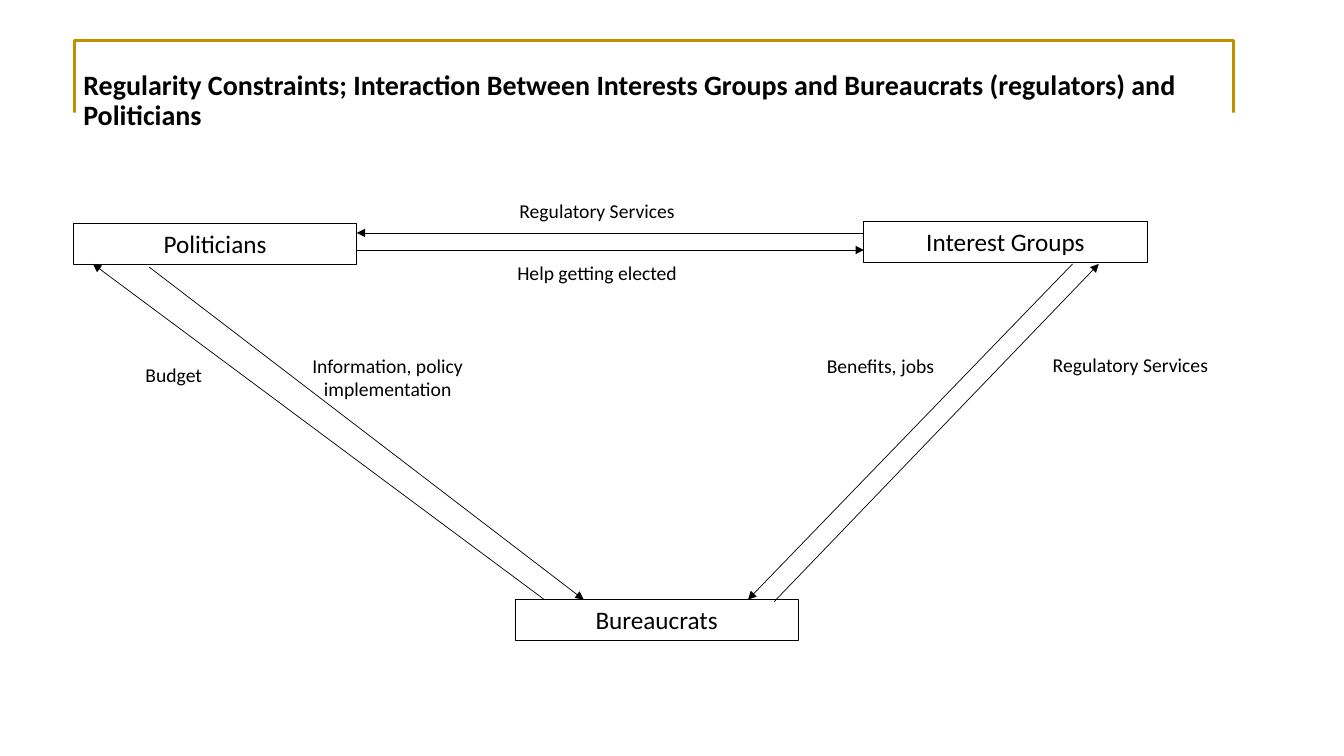
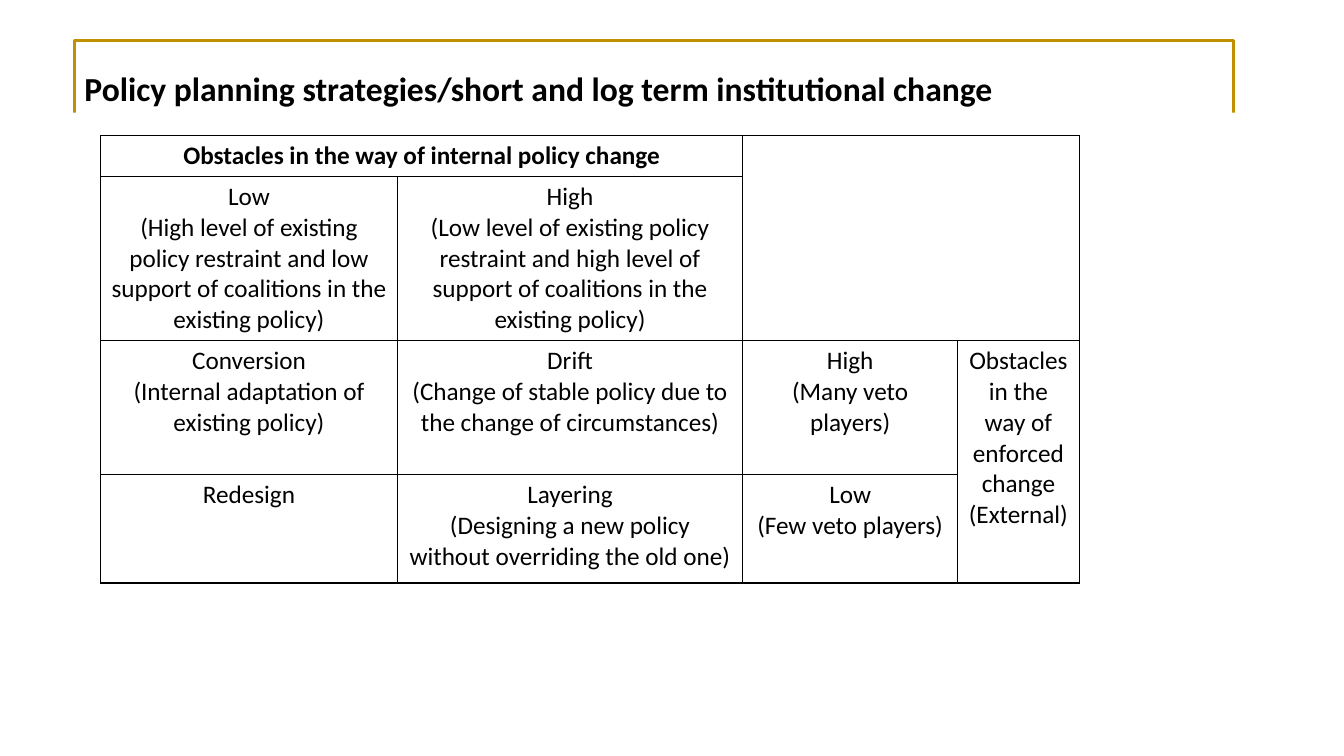
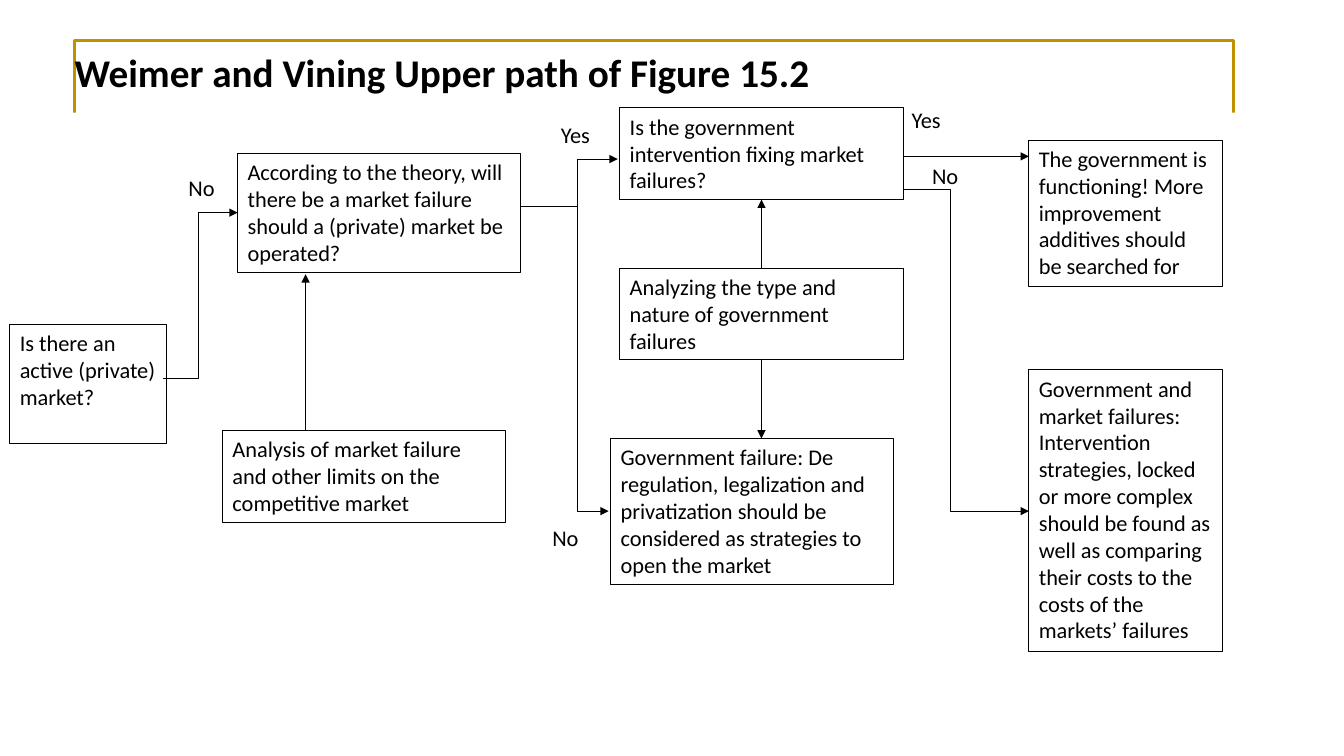
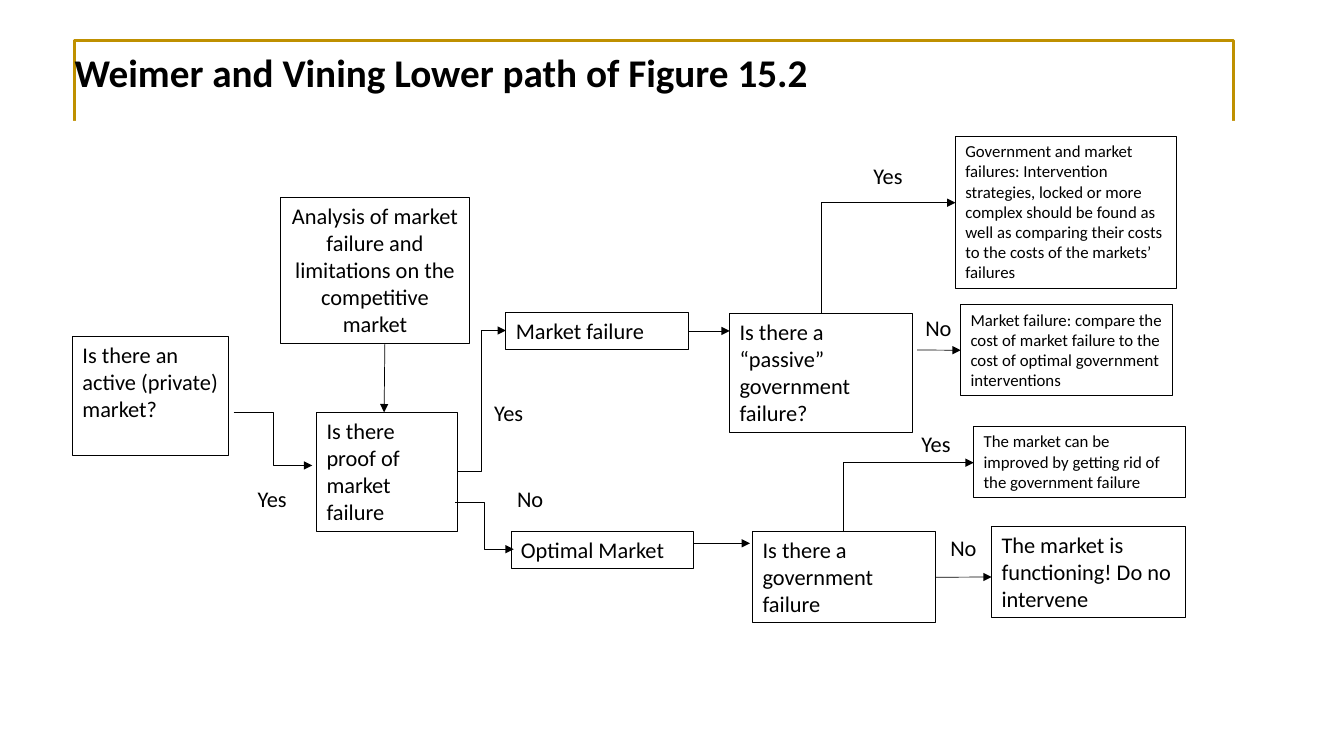
"""Build four slides on regulation, policy change and market failure."""
from lxml import etree
from pptx import Presentation
from pptx.dml.color import RGBColor
from pptx.enum.shapes import MSO_CONNECTOR, MSO_SHAPE
from pptx.enum.text import MSO_ANCHOR, PP_ALIGN
from pptx.oxml.ns import qn
from pptx.util import Cm, Pt

COLORS = {"ink": "000000", "gold": "BF9000", "paper": "FFFFFF"}
FONT = "Calibri"
RECT = MSO_SHAPE.RECTANGLE
STRAIGHT, ELBOW = MSO_CONNECTOR.STRAIGHT, MSO_CONNECTOR.ELBOW
LEFT, CENTER = PP_ALIGN.LEFT, PP_ALIGN.CENTER
TOP, MIDDLE = MSO_ANCHOR.TOP, MSO_ANCHOR.MIDDLE
SITE_TOP, SITE_LEFT, SITE_BOTTOM, SITE_RIGHT = range(4)
WIDE = 7.14
FAILURES = (
    "Government and market failures: Intervention strategies, locked or more "
    "complex should be found as well as comparing their costs to the costs of "
    "the markets’ failures"
)


def color(name):
    return RGBColor.from_string(COLORS[name])


def write(frame, text, size, align=LEFT, bold=False):
    frame.word_wrap = True
    for i, line in enumerate(text.split("\n")):
        para = frame.add_paragraph() if i else frame.paragraphs[0]
        para.text = line
        para.alignment = align
        font = para.font
        font.name, font.size, font.bold = FONT, Pt(size), bold
        font.color.rgb = color("ink")


def rect(slide, x, y, w, h, line=None, weight=0.75, fill=None):
    shape = slide.shapes.add_shape(RECT, Cm(x), Cm(y), Cm(w), Cm(h))
    shape.shadow.inherit = False
    if fill:
        shape.fill.solid()
        shape.fill.fore_color.rgb = color(fill)
    else:
        shape.fill.background()
    if line:
        shape.line.color.rgb = color(line)
        shape.line.width = Pt(weight)
    else:
        shape.line.fill.background()
    return shape


def box(slide, text, x, y, w, h, size=16, align=LEFT):
    shape = rect(slide, x, y, w, h, "ink")
    shape.text_frame.vertical_anchor = TOP
    write(shape.text_frame, text, size, align)
    return shape


def label(slide, text, x, y, w=2.18, h=0.94, size=16):
    shape = slide.shapes.add_textbox(Cm(x), Cm(y), Cm(w), Cm(h))
    write(shape.text_frame, text, size, CENTER)


def link(slide, kind, x1, y1, x2, y2):
    line = slide.shapes.add_connector(kind, Cm(x1), Cm(y1), Cm(x2), Cm(y2))
    line.line.color.rgb = color("ink")
    line.line.width = Pt(0.5)
    etree.SubElement(line.line._get_or_add_ln(), qn("a:tailEnd"), type="triangle")
    etree.SubElement(line._element.spPr, qn("a:effectLst"))
    return line


def arrow(slide, x1, y1, x2, y2, start=None, end=None):
    line = link(slide, STRAIGHT, x1, y1, x2, y2)
    if start:
        line.begin_connect(*start)
    if end:
        line.end_connect(*end)


def elbow(slide, x1, y1, x2, y2, bend=None):
    line = link(slide, ELBOW, x1, y1, x2, y2)
    if bend is not None:
        ratio = round((bend - x1) / (x2 - x1) * 100000)
        guides = line._element.spPr.find(qn("a:prstGeom")).get_or_add_avLst()
        etree.SubElement(guides, qn("a:gd"), name="adj1", fmla=f"val {ratio}")


def start_slide(deck, title, size, x=1.63, y=0.05, h=3.68, anchor=MIDDLE, cut=2.84):
    slide = deck.slides.add_slide(deck.slide_layouts[6])
    rect(slide, 1.88, 1.02, 29.21, 3.2, "gold", 2.25)
    rect(slide, 1.63, cut, 29.9, 1.55, fill="paper")
    head = slide.shapes.add_textbox(Cm(x), Cm(y), Cm(29.21), Cm(h))
    head.text_frame.vertical_anchor = anchor
    write(head.text_frame, title, size, bold=True)
    head.text_frame.paragraphs[0].line_spacing = 0.9
    return slide


def border(cell):
    props = cell._tc.get_or_add_tcPr()
    for side in ("lnL", "lnR", "lnT", "lnB"):
        line = etree.SubElement(props, qn(f"a:{side}"), w=str(Pt(1)))
        fill = etree.SubElement(line, qn("a:solidFill"))
        etree.SubElement(fill, qn("a:srgbClr"), val=COLORS["ink"])


def grid(slide, x, y, widths, heights, rows, spans):
    table = slide.shapes.add_table(
        len(heights), len(widths), Cm(x), Cm(y), Cm(sum(widths)), Cm(sum(heights))
    ).table
    table.first_row = table.horz_banding = False
    for col, width in zip(table.columns, widths):
        col.width = Cm(width)
    for r, texts in enumerate(rows):
        table.rows[r].height = Cm(heights[r])
        for c, text in enumerate(texts):
            cell = table.cell(r, c)
            border(cell)
            cell.fill.background()
            write(cell.text_frame, text, 18, CENTER, bold=r == 0)
    for first, last in spans:
        table.cell(*first).merge(table.cell(*last))


def triangle(deck):
    slide = start_slide(
        deck,
        "Regularity Constraints; Interaction Between Interests Groups and "
        "Bureaucrats (regulators) and Politicians",
        20, x=1.85, y=0.71,
    )
    for text, x, y in (
        ("Politicians", 1.85, 5.64),
        ("Interest Groups", 21.77, 5.59),
        ("Bureaucrats", 12.98, 15.11),
    ):
        box(slide, text, x, y, WIDE, 1.02, 18, CENTER)
    for text, x, y, h in (
        ("Information, policy implementation", 6.2, 8.79, 1.45),
        ("Benefits, jobs", 18.62, 8.79, 0.86),
        ("Regulatory Services", 24.92, 8.76, 0.86),
        ("Budget", 0.81, 9.02, 0.86),
        ("Regulatory Services", 11.48, 4.9, 0.86),
        ("Help getting elected", 11.48, 6.45, 0.86),
    ):
        label(slide, text, x, y, WIDE, h, 14)
    for ends in (
        (13.72, 15.11, 2.34, 6.65),
        (19.51, 15.16, 27.69, 6.65),
        (21.77, 5.87, 8.99, 5.87),
        (8.99, 6.3, 21.77, 6.3),
        (27.03, 6.65, 18.85, 15.11),
        (3.76, 6.73, 14.71, 15.11),
    ):
        arrow(slide, *ends)


def matrix(deck):
    slide = start_slide(
        deck,
        "Policy planning strategies/short and log term institutional change",
        24, x=1.88, y=1.7, h=1.7, anchor=TOP,
    )
    rows = (
        ("Obstacles in the way of internal policy change", "", "", ""),
        (
            "Low\n(High level of existing policy restraint and low support of "
            "coalitions in the existing policy)",
            "High\n(Low level of existing policy restraint and high level of "
            "support of coalitions in the existing policy)",
            "", "",
        ),
        (
            "Conversion\n(Internal adaptation of existing policy)",
            "Drift\n(Change of stable policy due to the change of circumstances)",
            "High\n(Many veto players)",
            "Obstacles in the way of enforced change (External)",
        ),
        (
            "Redesign",
            "Layering\n(Designing a new policy without overriding the old one)",
            "Low\n(Few veto players)",
            "",
        ),
    )
    spans = (((0, 0), (0, 1)), ((0, 2), (1, 3)), ((2, 3), (3, 3)))
    grid(slide, 2.54, 3.42, (7.47, 8.71, 5.41, 3.07), (1.03, 4.14, 3.37, 2.73), rows, spans)


def upper(deck):
    slide = start_slide(deck, "Weimer and Vining Upper path of Figure 15.2", 28)
    box(slide, "Is there an active (private) market?", 0.25, 8.18, 3.94, 3)
    box(
        slide,
        "According to the theory, will there be a market failure should a "
        "(private) market be operated?",
        5.99, 3.86, WIDE, 3,
    )
    box(
        slide,
        "Analysis of market failure and other limits on the competitive market",
        5.61, 10.85, WIDE, 2.31,
    )
    fixing = box(
        slide, "Is the government intervention fixing market failures?",
        15.62, 2.72, WIDE, 2.31,
    )
    nature = box(
        slide, "Analyzing the type and nature of government failures",
        15.62, 6.76, WIDE, 2.31,
    )
    box(
        slide,
        "Government failure: De regulation, legalization and privatization "
        "should be considered as strategies to open the market",
        15.39, 11.05, WIDE, 3.68,
    )
    box(
        slide,
        "The government is functioning! More improvement additives should be "
        "searched for",
        25.93, 3.53, 4.88, 3.68,
    )
    box(slide, FAILURES, 25.93, 9.32, 4.88, 7.09)
    for text, x, y in (
        ("No", 3.99, 4.27),
        ("Yes", 13.41, 2.92),
        ("No", 13.16, 13.08),
        ("Yes", 22.25, 2.54),
        ("No", 22.73, 3.96),
    ):
        label(slide, text, x, y)
    arrow(slide, 19.19, 9.07, 19.19, 11.05, start=(nature, SITE_BOTTOM))
    arrow(slide, 19.19, 6.76, 19.19, 5.03, (nature, SITE_TOP), (fixing, SITE_BOTTOM))
    arrow(slide, 22.76, 3.94, 25.93, 3.94)
    arrow(slide, 7.7, 10.85, 7.7, 6.91)
    elbow(slide, 4.11, 9.53, 5.99, 5.36, bend=5)
    elbow(slide, 13.13, 5.21, 15.57, 4.01, bend=14.55)
    elbow(slide, 13.13, 5.21, 15.34, 12.88, bend=14.55)
    elbow(slide, 22.76, 4.78, 25.93, 12.88, bend=23.95)


def lower(deck):
    slide = start_slide(deck, "Weimer and Vining Lower path of Figure 15.2", 28, cut=3.05)
    box(slide, "Is there an active (private) market?", 1.83, 8.48, 3.94, 3)
    box(
        slide,
        "Analysis of market failure and limitations on the competitive market",
        7.06, 4.98, 4.78, 3.68, align=CENTER,
    )
    box(slide, "Is there proof of market failure", 7.98, 10.39, 3.56, 3)
    market = box(slide, "Market failure", 12.75, 7.87, 4.6, 0.94)
    box(slide, "Optimal Market", 12.88, 13.39, 4.6, 0.94)
    box(slide, "Is there a “passive” government failure?", 18.39, 7.9, 4.6, 3)
    failure = box(slide, "Is there a government failure", 18.97, 13.39, 4.6, 2.31)
    box(slide, FAILURES, 24.08, 3.43, 5.56, 3.84, 12)
    compare = box(
        slide,
        "Market failure: compare the cost of market failure to the cost of "
        "optimal government interventions",
        24.21, 7.67, 5.33, 2.31, 12,
    )
    box(
        slide,
        "The market can be improved by getting rid of the government failure",
        24.54, 10.74, 5.33, 1.8, 12,
    )
    box(slide, "The market is functioning! Do no intervene", 24.99, 13.26, 4.88, 2.31)
    for text, x, y in (
        ("Yes", 5.77, 12.09),
        ("Yes", 11.73, 9.93),
        ("No", 12.27, 12.09),
        ("Yes", 21.29, 3.96),
        ("No", 22.56, 7.8),
        ("Yes", 22.5, 10.72),
        ("No", 23.19, 13.34),
    ):
        label(slide, text, x, y)
    arrow(slide, 9.7, 8.66, 9.68, 10.39)
    arrow(slide, 17.48, 13.69, 18.9, 13.69)
    arrow(slide, 17.35, 8.34, 18.39, 8.34, start=(market, SITE_RIGHT))
    arrow(slide, 23.11, 8.82, 24.21, 8.82, end=(compare, SITE_LEFT))
    arrow(slide, 23.57, 14.54, 24.99, 14.54, start=(failure, SITE_RIGHT))
    elbow(slide, 5.89, 10.39, 7.87, 11.73)
    elbow(slide, 11.53, 11.89, 12.75, 8.33)
    elbow(slide, 11.48, 12.67, 12.95, 13.84)
    elbow(slide, 20.7, 7.9, 24.08, 5.11, bend=20.7)
    elbow(slide, 21.26, 13.39, 24.54, 11.66, bend=21.26)


def main():
    deck = Presentation()
    deck.slide_width, deck.slide_height = Cm(33.87), Cm(19.05)
    for build in (triangle, matrix, upper, lower):
        build(deck)
    deck.save("out.pptx")


if __name__ == "__main__":
    main()
